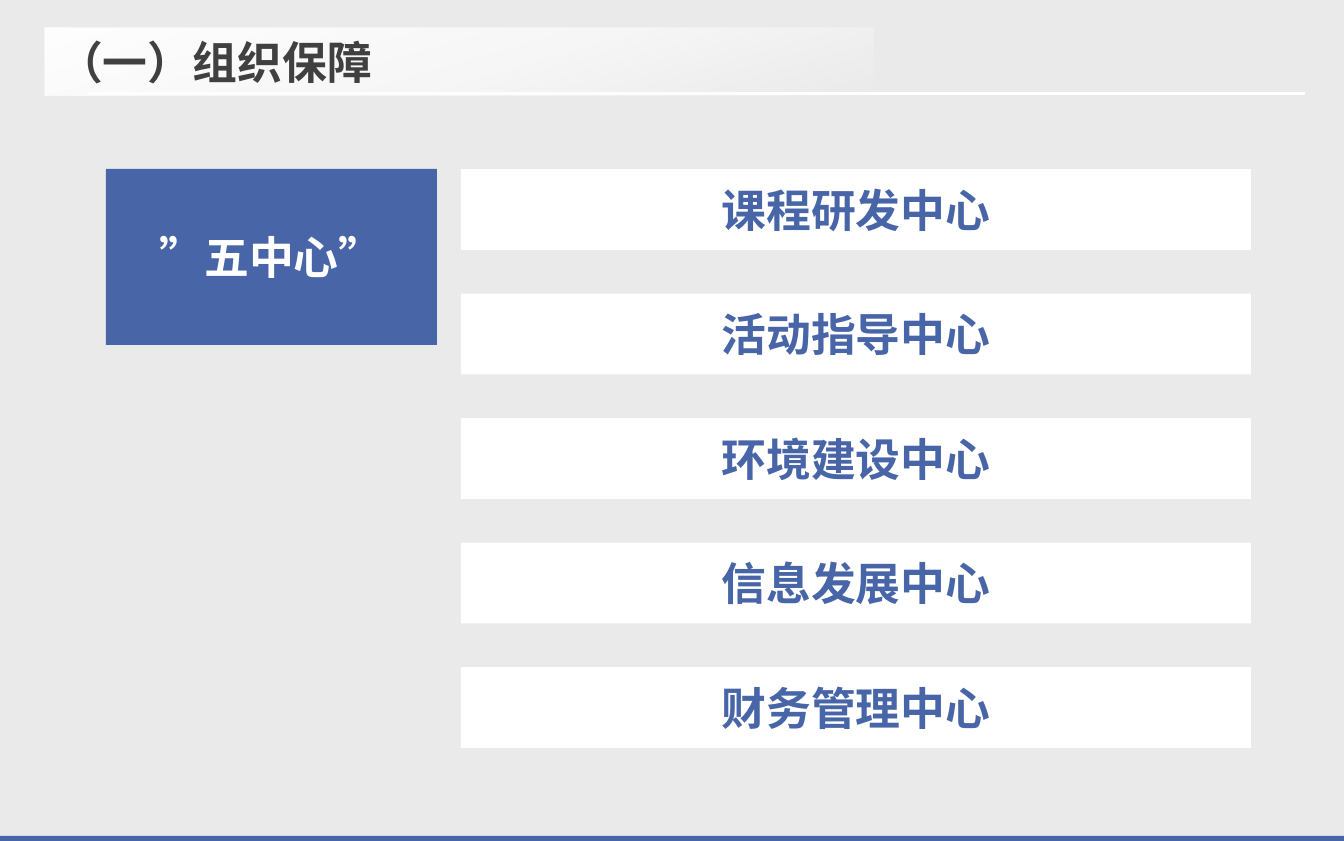
from dataclasses import dataclass

from lxml import etree
from pptx import Presentation
from pptx.dml.color import RGBColor
from pptx.enum.shapes import MSO_SHAPE
from pptx.enum.text import MSO_ANCHOR, PP_ALIGN
from pptx.oxml.ns import qn
from pptx.util import Emu, Pt

RECTANGLE = MSO_SHAPE.RECTANGLE
MIDDLE = MSO_ANCHOR.MIDDLE
LEFT, CENTER = PP_ALIGN.LEFT, PP_ALIGN.CENTER
EMU_PER_PX = 914400 / 134.4
SLIDE_WIDTH, SLIDE_HEIGHT = 1344, 841


@dataclass(frozen=True)
class Theme:
    """Colours and type of the slide."""
    background: str = "EAEAEA"
    accent: str = "4765A7"
    panel: str = "FFFFFF"
    heading: str = "404040"
    font: str = "Noto Sans CJK SC"
    size: int = 24


THEME = Theme()
CENTERS = ["课程研发中心", "活动指导中心", "环境建设中心", "信息发展中心", "财务管理中心"]


def px(length):
    """Turn px into EMU."""
    return Emu(round(length * EMU_PER_PX))


def add_box(slide, box, fill):
    """Add a plain filled rectangle."""
    rectangle = slide.shapes.add_shape(RECTANGLE, *map(px, box))
    rectangle.shadow.inherit = False
    rectangle.line.fill.background()
    rectangle.fill.solid()
    rectangle.fill.fore_color.rgb = RGBColor.from_string(fill)
    return rectangle


def write_label(holder, text, color, alignment):
    """Write one bold line, vertically centred in its holder."""
    frame = holder.text_frame
    frame.word_wrap = True
    frame.vertical_anchor = MIDDLE
    frame.text = text
    paragraph = frame.paragraphs[0]
    paragraph.alignment = alignment
    run = paragraph.runs[0]
    run.font.size = Pt(THEME.size)
    run.font.bold = True
    run.font.color.rgb = RGBColor.from_string(color)
    run.font.name = THEME.font
    properties = run.font._element
    properties.set("lang", "zh-CN")
    east_asian = etree.Element(qn("a:ea"), typeface=THEME.font)
    properties.find(qn("a:latin")).addnext(east_asian)


def fade_out(band, color, stops, angle):
    """Give a band a gradient of one colour through (position, opacity) stops."""
    gradient = etree.Element(qn("a:gradFill"), rotWithShape="1")
    stop_list = etree.SubElement(gradient, qn("a:gsLst"))
    for position, opacity in stops:
        stop = etree.SubElement(stop_list, qn("a:gs"), pos=str(position * 1000))
        tint = etree.SubElement(stop, qn("a:srgbClr"), val=color)
        etree.SubElement(tint, qn("a:alpha"), val=str(opacity * 1000))
    etree.SubElement(gradient, qn("a:lin"), ang=str(angle * 60000), scaled="0")
    properties = band._element.spPr
    properties.replace(properties.find(qn("a:solidFill")), gradient)


def add_header(slide, box, title):
    """Draw the title over a fading band with a rule along its foot."""
    left, top, width, height = box
    band_box = (left, top, 829, height)
    add_box(slide, (left + 44, top + 64, width - 44, 3), THEME.panel)
    band = add_box(slide, band_box, THEME.panel)
    fade_out(band, THEME.panel, [(0, 100), (57, 60), (100, 0)], 74)
    heading = slide.shapes.add_textbox(*map(px, band_box))
    write_label(heading, title, THEME.heading, LEFT)


def add_badge(slide, box, text):
    """Draw the accent block that names the group."""
    badge = add_box(slide, box, THEME.accent)
    write_label(badge, text, THEME.panel, CENTER)


def add_center_list(slide, box, names, bar_height):
    """Spread one bar per name evenly down the box."""
    left, top, width, height = box
    pitch = (height - bar_height) / (len(names) - 1)
    for index, name in enumerate(names):
        bar = add_box(slide, (left, top + index * pitch, width, bar_height), THEME.panel)
        write_label(bar, name, THEME.accent, CENTER)


def main():
    """Build and save the slide."""
    presentation = Presentation()
    presentation.slide_width = px(SLIDE_WIDTH)
    presentation.slide_height = px(SLIDE_HEIGHT)
    slide = presentation.slides.add_slide(presentation.slide_layouts[6])
    slide.background.fill.solid()
    slide.background.fill.fore_color.rgb = RGBColor.from_string(THEME.background)
    add_box(slide, (0, SLIDE_HEIGHT - 5, SLIDE_WIDTH, 5), THEME.accent)
    add_header(slide, (45, 28, 1260, 68), "（一）组织保障")
    add_badge(slide, (106, 169, 331, 176), "”五中心”")
    add_center_list(slide, (461, 169, 790, 579), CENTERS, 81)
    presentation.save("out.pptx")


if __name__ == "__main__":
    main()
